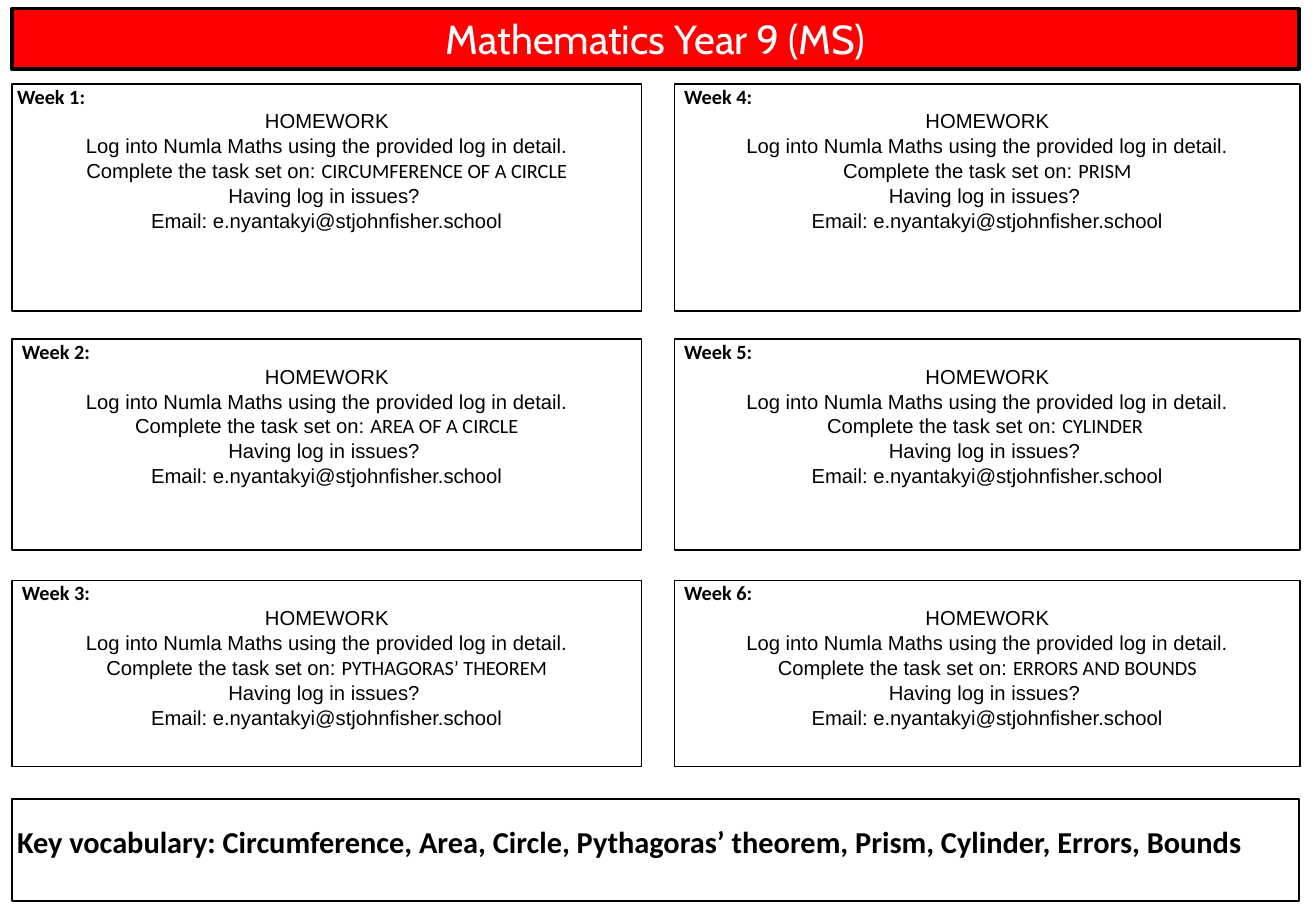
from dataclasses import dataclass

import pptx
import pptx.dml.color
import pptx.enum.shapes
import pptx.enum.text
import pptx.shapes.autoshape
import pptx.slide
import pptx.util

Inches = pptx.util.Inches
Pt = pptx.util.Pt
ALIGN = pptx.enum.text.PP_ALIGN

COLOURS = {"black": "000000", "white": "FFFFFF", "banner": "FF0000"}
LEFT = 0.1
FULL_WIDTH = 10.59
COLUMNS = [(LEFT, 5.18), (5.55, 5.15)]
ROWS = [(0.69, 1.87), (2.79, 1.74), (4.78, 1.53)]


@dataclass(frozen=True)
class Week:
    number: int
    topic: str
    indent: float = 0.08


WEEKS = [
    Week(1, "CIRCUMFERENCE OF A CIRCLE", 0.04),
    Week(2, "AREA OF A CIRCLE"),
    Week(3, "PYTHAGORAS’ THEOREM"),
    Week(4, "PRISM"),
    Week(5, "CYLINDER "),
    Week(6, "ERRORS AND BOUNDS"),
]


def colour(name: str) -> pptx.dml.color.RGBColor:
    return pptx.dml.color.RGBColor.from_string(COLOURS[name])


def add_box(page: pptx.slide.Slide, left: float, top: float, width: float, height: float,
            fill: str = "", line_width: float = 1,
            inset: float = 0) -> pptx.shapes.autoshape.Shape:
    box = page.shapes.add_shape(
        pptx.enum.shapes.MSO_SHAPE.RECTANGLE,
        Inches(left), Inches(top), Inches(width), Inches(height))
    box.shadow.inherit = False
    if fill:
        box.fill.solid()
        box.fill.fore_color.rgb = colour(fill)
    else:
        box.fill.background()
    box.line.color.rgb = colour("black")
    box.line.width = Pt(line_width)
    frame = box.text_frame
    frame.word_wrap = True
    frame.vertical_anchor = pptx.enum.text.MSO_ANCHOR.TOP
    frame.margin_left = frame.margin_right = Inches(inset)
    frame.margin_top = frame.margin_bottom = Inches(inset / 2)
    return box


def write(box: pptx.shapes.autoshape.Shape, text: str, *, font: str = "Arial",
          size: float = 12, bold: bool = False, ink: str = "black",
          align: ALIGN = ALIGN.CENTER, indent: float = 0,
          space_before: float = 0, same_line: bool = False) -> None:
    frame = box.text_frame
    para = frame.paragraphs[-1]
    if not same_line:
        if para.runs:
            para = frame.add_paragraph()
            para.space_before = Pt(space_before)
        para.alignment = align
        if indent:
            properties = para._p.get_or_add_pPr()
            properties.set("marL", str(Inches(indent)))
            properties.set("indent", "0")
    span = para.add_run()
    span.text = text
    span.font.name = font
    span.font.size = Pt(size)
    span.font.bold = bold
    span.font.color.rgb = colour(ink)


def add_week(page: pptx.slide.Slide, week: Week) -> None:
    column, row = divmod(week.number - 1, len(ROWS))
    left, width = COLUMNS[column]
    top, height = ROWS[row]
    box = add_box(page, left, top, width, height)
    write(box, f"Week {week.number}:", font="Calibri", bold=True,
          align=ALIGN.LEFT, indent=week.indent)
    for text, topic in [
        ("HOMEWORK", ""),
        ("Log into Numla Maths using the provided log in detail.", ""),
        ("Complete the task set on: ", week.topic),
        ("Having log in issues? ", ""),
        ("Email: e.nyantakyi@stjohnfisher.school", ""),
    ]:
        write(box, text, space_before=0.4)
        if topic:
            write(box, topic, font="Calibri", same_line=True)


def main() -> None:
    deck = pptx.Presentation()
    deck.slide_width = Inches(10.83)
    deck.slide_height = Inches(7.5)
    page = deck.slides.add_slide(deck.slide_layouts[6])

    banner = add_box(page, LEFT, 0.07, FULL_WIDTH, 0.5,
                     fill="banner", line_width=2.25, inset=0.1)
    write(banner, "Mathematics Year 9 (MS)", font="Cabin", size=24, ink="white")

    for week in WEEKS:
        add_week(page, week)

    vocabulary = add_box(page, LEFT, 6.58, FULL_WIDTH, 0.84)
    vocabulary.text_frame.margin_top = Inches(0.2)
    write(vocabulary,
          "Key vocabulary: Circumference, Area, Circle, Pythagoras’ theorem, "
          "Prism, Cylinder, Errors, Bounds",
          font="Calibri", size=18, bold=True, align=ALIGN.JUSTIFY, indent=0.04)

    deck.save("out.pptx")


if __name__ == "__main__":
    main()
